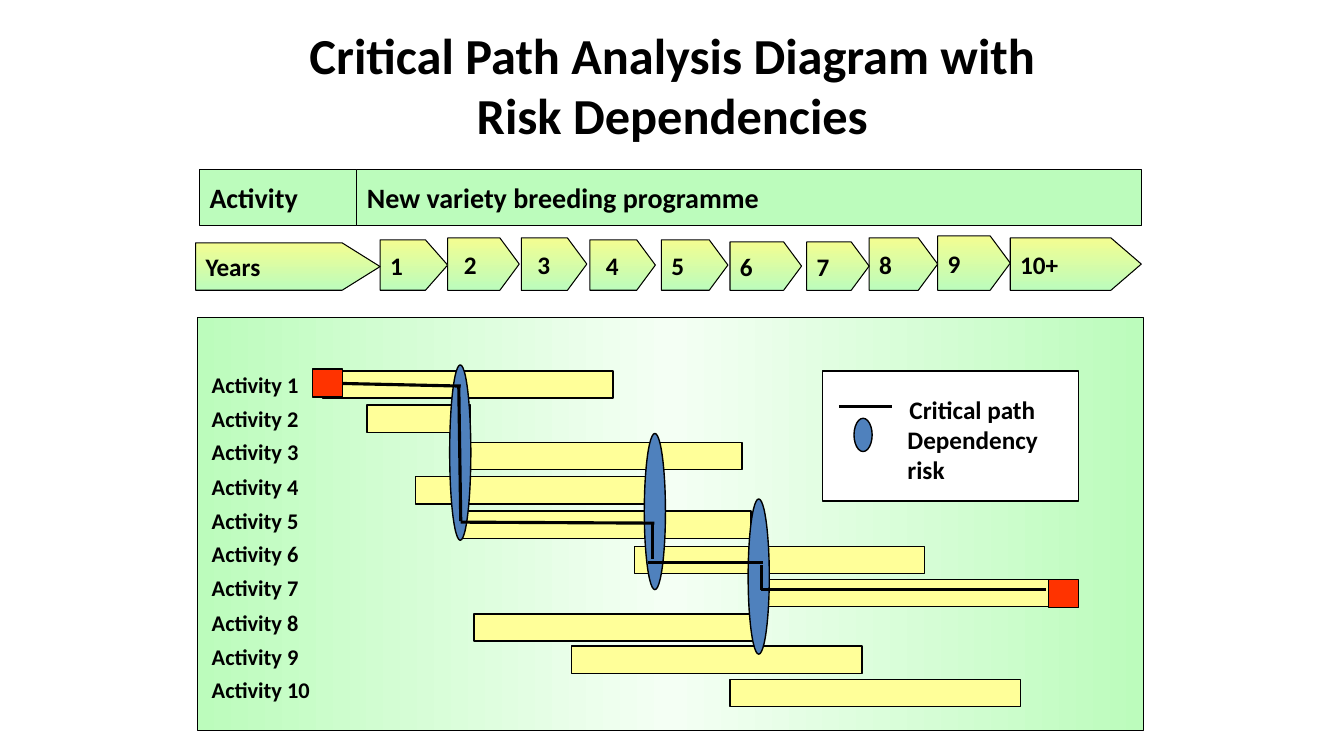
"""Build the critical path analysis slide with its risk dependencies."""
from copy import deepcopy
from dataclasses import dataclass

from pptx import Presentation
from pptx.dml.color import RGBColor
from pptx.enum.shapes import MSO_CONNECTOR, MSO_SHAPE
from pptx.enum.text import MSO_ANCHOR, MSO_AUTO_SIZE, PP_ALIGN
from pptx.oxml.ns import qn
from pptx.oxml.xmlchemy import OxmlElement
from pptx.util import Emu, Pt

EMU_PER_PX = 9144


@dataclass(frozen=True)
class Theme:
    font: str = "Calibri"
    black: RGBColor = RGBColor.from_string("000000")
    white: RGBColor = RGBColor.from_string("FFFFFF")
    green: RGBColor = RGBColor.from_string("BCFCBC")
    pale_green: RGBColor = RGBColor.from_string("F4FFF4")
    lime: RGBColor = RGBColor.from_string("F3FD91")
    yellow: RGBColor = RGBColor.from_string("FFFF99")
    blue: RGBColor = RGBColor.from_string("4F81BD")
    red: RGBColor = RGBColor.from_string("FF3300")
    title_size: int = 36
    header_size: int = 20
    year_size: int = 18
    activity_size: int = 16
    thin_line: float = 0.75
    bar_line: float = 1
    path_line: float = 2.25


def px(length):
    return Emu(length * EMU_PER_PX)


class SlideBuilder:
    def __init__(self, presentation, theme):
        self.theme = theme
        self.slide = presentation.slides.add_slide(presentation.slide_layouts[5])

    def format_text(self, text_frame, text, size, align=PP_ALIGN.LEFT):
        text_frame.text = text
        text_frame.word_wrap = True
        text_frame.auto_size = MSO_AUTO_SIZE.NONE
        for paragraph in text_frame.paragraphs:
            paragraph.alignment = align
            for run in paragraph.runs:
                run.font.name = self.theme.font
                run.font.size = Pt(size)
                run.font.bold = True
                run.font.color.rgb = self.theme.black

    def title(self, text, left, top, width, height):
        title = self.slide.shapes.title
        title.left, title.top = px(left), px(top)
        title.width, title.height = px(width), px(height)
        self.format_text(title.text_frame, text, self.theme.title_size, PP_ALIGN.CENTER)
        title.text_frame.vertical_anchor = MSO_ANCHOR.MIDDLE

    def shape(self, kind, box, colors, line_width):
        shape = self.slide.shapes.add_shape(kind, *map(px, box))
        shape.shadow.inherit = False
        shape.line.color.rgb = self.theme.black
        shape.line.width = Pt(line_width)
        if len(colors) == 1:
            shape.fill.solid()
            shape.fill.fore_color.rgb = colors[0]
        else:
            self.gradient(shape, colors)
        return shape

    def gradient(self, shape, colors):
        shape.fill.gradient()
        shape.fill.gradient_angle = 0
        stop_list = shape.element.spPr.find(qn("a:gradFill")).find(qn("a:gsLst"))
        for _ in colors[2:]:
            stop_list.append(deepcopy(stop_list[0]))
        for index, (stop, color) in enumerate(zip(shape.fill.gradient_stops, colors)):
            stop.color.rgb = color
            stop.position = index / (len(colors) - 1)

    def header(self, text, box):
        shape = self.shape(MSO_SHAPE.RECTANGLE, box, [self.theme.green], self.theme.thin_line)
        self.format_text(shape.text_frame, text, self.theme.header_size)
        shape.text_frame.vertical_anchor = MSO_ANCHOR.MIDDLE

    def year(self, text, left, top, width, point, inset):
        box = (left, top, width, 288 - top)
        colors = [self.theme.lime, self.theme.green]
        shape = self.shape(MSO_SHAPE.PENTAGON, box, colors, self.theme.thin_line)
        shape.fill.gradient_angle = 270
        shape.adjustments[0] = point
        self.format_text(shape.text_frame, text, self.theme.year_size)
        shape.text_frame.margin_left = px(inset)
        shape.text_frame.margin_right = 0
        shape.text_frame.vertical_anchor = MSO_ANCHOR.MIDDLE

    def rectangle(self, box, color):
        self.shape(MSO_SHAPE.RECTANGLE, box, [color], self.theme.bar_line)

    def risk(self, box):
        self.shape(MSO_SHAPE.OVAL, box, [self.theme.blue], self.theme.bar_line)

    def path_line(self, points):
        connector = self.slide.shapes.add_connector(MSO_CONNECTOR.STRAIGHT, *map(px, points))
        connector.line.color.rgb = self.theme.black
        connector.line.width = Pt(self.theme.path_line)
        connector.element.spPr.append(OxmlElement("a:effectLst"))

    def label(self, text, box, size):
        text_frame = self.slide.shapes.add_textbox(*map(px, box)).text_frame
        self.format_text(text_frame, text, size)
        text_frame.margin_left = text_frame.margin_right = 0
        text_frame.margin_top = text_frame.margin_bottom = 0


YEARS = [
    ("10+", 1002, 236, 130, 0.58, 10),
    ("9", 930, 234, 72, 0.37, 10),
    ("8", 862, 236, 68, 0.37, 10),
    ("7", 800, 240, 62, 0.37, 10),
    ("6", 724, 240, 71, 0.37, 10),
    ("5", 656, 238, 66, 0.37, 10),
    ("4", 585, 238, 65, 0.37, 16),
    ("3", 517, 236, 65, 0.37, 16),
    ("2", 444, 236, 71, 0.37, 16),
    ("1", 377, 238, 67, 0.44, 10),
    ("Years", 194, 241, 183, 0.8, 10),
]
ACTIVITY_BARS = [
    (320, 368, 288), (364, 402, 103), (448, 439, 288), (412, 473, 242), (457, 507, 288),
    (629, 542, 288), (752, 575, 288), (470, 609, 288), (567, 641, 288), (724, 674, 288),
]
RISKS = [(446, 362, 21, 174), (742, 495, 21, 154), (639, 430, 21, 155)]
MILESTONES = [(310, 366, 30, 28), (1040, 575, 30, 28)]
CRITICAL_PATH = [
    (320, 380, 457, 383), (455, 382, 457, 517), (457, 518, 649, 519), (647, 519, 647, 555),
    (643, 558, 757, 558), (755, 561, 755, 585), (755, 585, 1037, 585),
]


def main():
    presentation = Presentation()
    presentation.slide_width, presentation.slide_height = px(1333), px(750)
    theme = Theme()
    builder = SlideBuilder(presentation, theme)

    builder.title("Critical Path Analysis Diagram with\vRisk Dependencies", 167, 36, 1000, 95)
    builder.header("New variety breeding programme", (354, 168, 778, 56))
    builder.header("Activity", (198, 168, 156, 56))
    for year in YEARS:
        builder.year(*year)

    builder.shape(MSO_SHAPE.RECTANGLE, (196, 315, 938, 410),
                  [theme.green, theme.pale_green, theme.green], theme.thin_line)
    for index, (left, top, width) in enumerate(ACTIVITY_BARS):
        builder.rectangle((left, top, width, 27), theme.yellow)
        label_box = (210, round(368 + 33.7 * index), 105, 27)
        builder.label(f"Activity {index + 1}", label_box, theme.activity_size)
    for risk in RISKS:
        builder.risk(risk)
    for segment in CRITICAL_PATH:
        builder.path_line(segment)
    for milestone in MILESTONES:
        builder.rectangle(milestone, theme.red)

    builder.rectangle((816, 368, 254, 129), theme.white)
    builder.path_line((832, 403, 885, 403))
    builder.label("Critical path", (902, 391, 140, 30), theme.year_size)
    builder.risk((847, 415, 18, 33))
    builder.label("Dependency\vrisk", (900, 421, 140, 61), theme.year_size)

    presentation.save("out.pptx")


if __name__ == "__main__":
    main()
